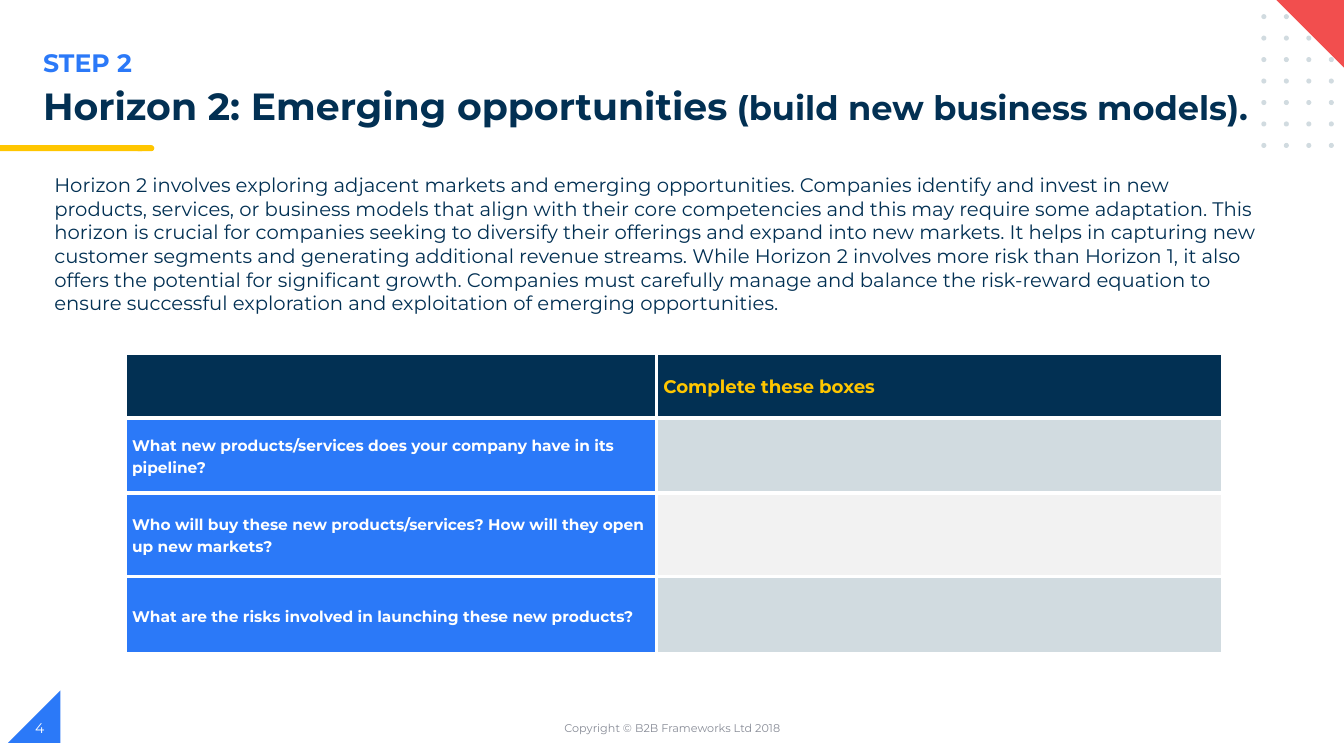
import pptx
import pptx.util
import pptx.dml.color
import pptx.enum.shapes
import pptx.enum.text
import pptx.oxml
import pptx.oxml.ns

Inches, Pt = pptx.util.Inches, pptx.util.Pt
SHAPE = pptx.enum.shapes.MSO_SHAPE
ALIGN = pptx.enum.text.PP_ALIGN
ANCHOR = pptx.enum.text.MSO_ANCHOR

FONT = "Montserrat"
NAVY, BLUE, YELLOW, RED = "023053", "2B79F8", "FFC600", "F24E4E"
GREY, PALE, WHITE, MUTED = "D1DBE0", "F2F2F2", "FFFFFF", "888C97"

STEP = "STEP 2"
TITLE = "Horizon 2: Emerging opportunities"
SUBTITLE = " (build new business models)."
BODY = (
    "Horizon 2 involves exploring adjacent markets and emerging opportunities. "
    "Companies identify and invest in new products, services, or business models "
    "that align with their core competencies and this may require some adaptation. "
    "This horizon is crucial for companies seeking to diversify their offerings and "
    "expand into new markets. It helps in capturing new customer segments and "
    "generating additional revenue streams. While Horizon 2 involves more risk than "
    "Horizon 1, it also offers the potential for significant growth. Companies must "
    "carefully manage and balance the risk-reward equation to ensure successful "
    "exploration and exploitation of emerging opportunities."
)
COPYRIGHT = "Copyright © B2B Frameworks Ltd 2018"
PAGE = "4"

HEADER = "Complete these boxes"
QUESTIONS = [
    ("What new products/services does your company have in its pipeline?", GREY),
    ("Who will buy these new products/services? How will they open up new markets?", PALE),
    ("What are the risks involved in launching these new products?", GREY),
]
COLUMNS = [5.27, 5.62]
ROWS = [0.65, 0.74, 0.83, 0.77]

DOT_COLUMNS, DOT_ROWS = 4, 7
DOT_LEFT, DOT_TOP, DOT_SIZE = 12.51, 0.14, 0.05
DOT_STEP_X, DOT_STEP_Y = 0.223, 0.213


def color(value):
    return pptx.dml.color.RGBColor.from_string(value)


def add_run(p, text, size=14, ink=NAVY, bold=False):
    r = p.add_run()
    r.text = text
    r.font.name, r.font.size, r.font.bold = FONT, Pt(size), bold
    r.font.color.rgb = color(ink)


def add_text(s, text, box, align=ALIGN.LEFT, anchor=ANCHOR.TOP, spacing=None, **style):
    tf = s.shapes.add_textbox(*map(Inches, box)).text_frame
    tf.word_wrap = True
    tf.vertical_anchor = anchor
    p = tf.paragraphs[0]
    p.alignment, p.line_spacing = align, spacing
    add_run(p, text, **style)
    return p


def add_block(s, kind, box, fill, rotation=0):
    sp = s.shapes.add_shape(kind, *map(Inches, box))
    sp.shadow.inherit = False
    sp.fill.solid()
    sp.fill.fore_color.rgb = color(fill)
    sp.line.fill.background()
    sp.rotation = rotation


def add_decoration(s):
    add_block(s, SHAPE.RIGHT_TRIANGLE, (0.08, 6.85, 0.52, 0.52), BLUE, 270)
    add_block(s, SHAPE.FLOWCHART_TERMINATOR, (1.34, 1.44, 0.19, 0.06), YELLOW)
    add_block(s, SHAPE.RECTANGLE, (0, 1.44, 1.41, 0.06), YELLOW)
    for row in range(DOT_ROWS):
        for col in range(DOT_COLUMNS):
            add_block(s, SHAPE.OVAL, (DOT_LEFT + col * DOT_STEP_X, DOT_TOP + row * DOT_STEP_Y,
                                      DOT_SIZE, DOT_SIZE), GREY)
    add_block(s, SHAPE.RIGHT_TRIANGLE, (12.65, -0.01, 0.72, 0.72), RED, 180)


def style_cell(cell, fill, text="", **style):
    cell.vertical_anchor = ANCHOR.MIDDLE
    cell.margin_left = cell.margin_right = Inches(0.07)
    cell.margin_top = cell.margin_bottom = 0
    if text:
        p = cell.text_frame.paragraphs[0]
        p.line_spacing = 1.15
        add_run(p, text, bold=True, **style)
    tc_pr = cell._tc.get_or_add_tcPr()
    for side in ("lnL", "lnR", "lnT", "lnB"):
        tc_pr.append(pptx.oxml.parse_xml(
            f'<a:{side} {pptx.oxml.ns.nsdecls("a")} w="{Pt(3)}"><a:solidFill>'
            f'<a:srgbClr val="{WHITE}"/></a:solidFill></a:{side}>'))
    cell.fill.solid()
    cell.fill.fore_color.rgb = color(fill)


def add_question_table(s):
    table = s.shapes.add_table(len(ROWS), len(COLUMNS), Inches(1.24), Inches(3.5),
                               Inches(sum(COLUMNS)), Inches(sum(ROWS))).table
    for column, width in zip(table.columns, COLUMNS):
        column.width = Inches(width)
    for row, height in zip(table.rows, ROWS):
        row.height = Inches(height)
    style_cell(table.cell(0, 0), NAVY)
    style_cell(table.cell(0, 1), NAVY, HEADER, size=13, ink=YELLOW)
    for i, (question, answer_fill) in enumerate(QUESTIONS, 1):
        style_cell(table.cell(i, 0), BLUE, question, size=11, ink=WHITE)
        style_cell(table.cell(i, 1), answer_fill)


def main():
    prs = pptx.Presentation()
    prs.slide_width, prs.slide_height = Inches(13.33), Inches(7.5)
    s = prs.slides.add_slide(prs.slide_layouts[6])
    add_decoration(s)
    add_text(s, STEP, (0.33, 0.42, 6.69, 0.4), size=18, ink=BLUE, bold=True)
    p = add_text(s, TITLE, (0.33, 0.82, 13, 0.56), spacing=0.9, size=27, bold=True)
    add_run(p, SUBTITLE, size=24, bold=True)
    add_text(s, COPYRIGHT, (4.42, 7.02, 4.5, 0.4), align=ALIGN.CENTER,
             anchor=ANCHOR.MIDDLE, size=8, ink=MUTED)
    add_text(s, PAGE, (0.25, 7.02, 3, 0.4), anchor=ANCHOR.MIDDLE, size=10, ink=WHITE)
    add_question_table(s)
    add_text(s, BODY, (0.44, 1.67, 12.22, 1.52))
    prs.save("out.pptx")


if __name__ == "__main__":
    main()
